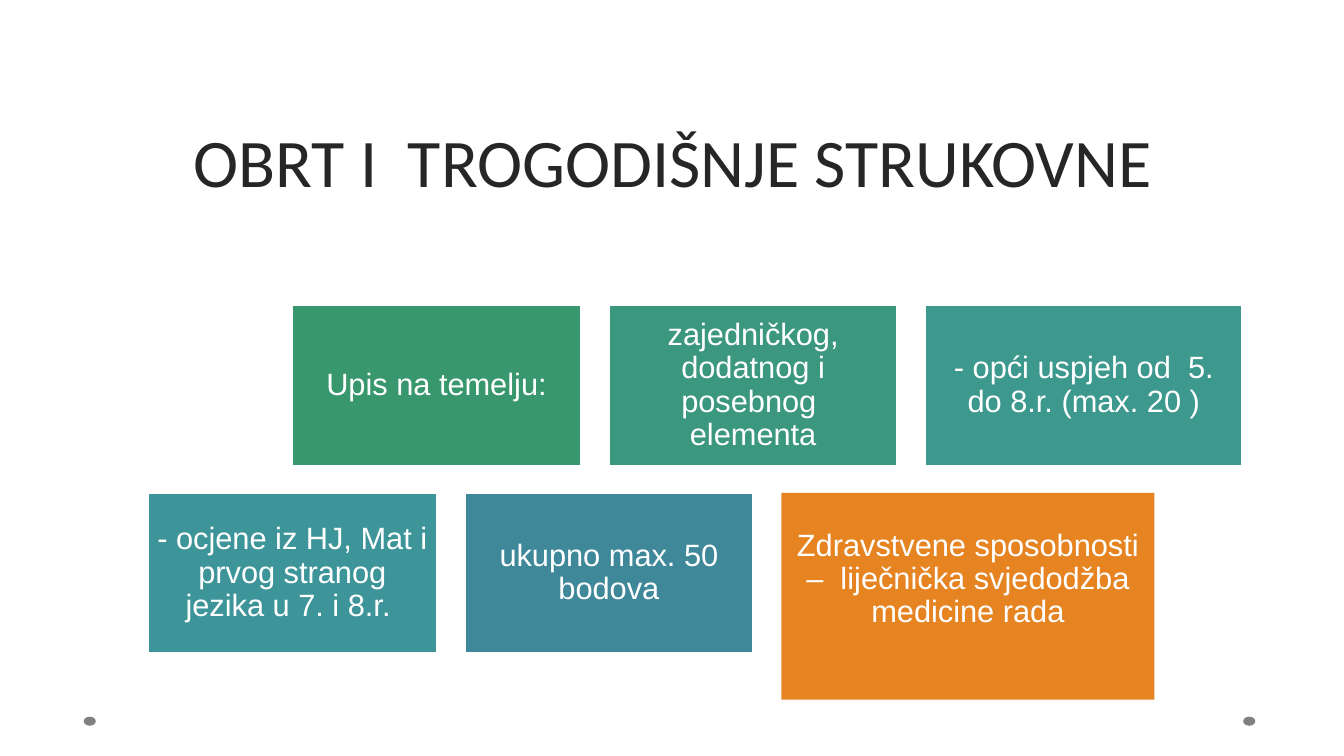
import pptx
import pptx.dml.color
import pptx.enum.shapes
import pptx.enum.text
import pptx.util

RGBColor = pptx.dml.color.RGBColor
WHITE = RGBColor(0xFF, 0xFF, 0xFF)
INK = RGBColor(0x26, 0x26, 0x26)
GRAY = RGBColor(0x80, 0x80, 0x80)
GREEN = RGBColor(0x39, 0x97, 0x6D)
SEA_GREEN = RGBColor(0x3B, 0x97, 0x7E)
TEAL = RGBColor(0x3D, 0x98, 0x8E)
CYAN = RGBColor(0x3E, 0x95, 0x99)
BLUE = RGBColor(0x3F, 0x88, 0x9A)
ORANGE = RGBColor(0xE6, 0x84, 0x22)

SHAPES = pptx.enum.shapes.MSO_SHAPE
INCH = pptx.util.Inches

# Card grid, in inches
COLUMN, ROW = 3.14, 1.86
CARD_WIDTH, CARD_HEIGHT = 2.86, 1.59
GRID_TOP = 3.03
ROW_STARTS = (2.9, 1.47)


class SlideBuilder:
    """Holds the text style and the page being built."""

    title_font, title_size = "Calibri", 48.6
    card_font, card_size = "Arial", 22
    card_inset = 0.09

    def __init__(self, deck):
        self.page = deck.slides.add_slide(deck.slide_layouts[6])

    def add_text(self, box, text, font, size, color, insets, spacing=1.0):
        frame = box.text_frame
        frame.word_wrap = True
        frame.vertical_anchor = pptx.enum.text.MSO_ANCHOR.MIDDLE
        (frame.margin_left, frame.margin_top,
         frame.margin_right, frame.margin_bottom) = map(INCH, insets)
        para = frame.paragraphs[0]
        para.alignment = pptx.enum.text.PP_ALIGN.CENTER
        para.line_spacing = spacing
        span = para.add_run()
        span.text = text
        span.font.name = font
        span.font.size = pptx.util.Pt(size)
        span.font.color.rgb = color

    def shape(self, kind, left, top, width, height, fill):
        box = self.page.shapes.add_shape(
            kind, INCH(left), INCH(top), INCH(width), INCH(height))
        box.shadow.inherit = False
        box.fill.solid()
        box.fill.fore_color.rgb = fill
        box.line.fill.background()
        return box

    def dot(self, left):
        self.shape(SHAPES.OVAL, left, 7.11, 0.12, 0.09, GRAY)

    def title(self, text):
        box = self.page.shapes.add_textbox(
            INCH(1.42), INCH(1.07), INCH(10.5), INCH(1.04))
        self.add_text(box, text, self.title_font, self.title_size, INK,
                      (0.1, 0.05, 0.1, 0.05))

    def card(self, row, column, text, fill, width=CARD_WIDTH,
             height=CARD_HEIGHT, outlined=True, lift=0.0):
        """Place a card on the grid; lift adds room below its text."""
        box = self.shape(SHAPES.RECTANGLE, ROW_STARTS[row] + column * COLUMN,
                         GRID_TOP + row * ROW, width, height, fill)
        if outlined:
            box.line.color.rgb = WHITE
            box.line.width = pptx.util.Pt(1.25)
        inset = self.card_inset
        self.add_text(box, text, self.card_font, self.card_size, WHITE,
                      (inset, inset, inset, inset + lift), spacing=0.9)


def main():
    deck = pptx.Presentation()
    deck.slide_width, deck.slide_height = INCH(13.33), INCH(7.5)
    slide = SlideBuilder(deck)

    # Footer dots
    for left in (0.83, 12.33):
        slide.dot(left)

    # Heading
    slide.title("OBRT I  TROGODIŠNJE STRUKOVNE")

    # Upper row of cards
    slide.card(0, 0, "Upis na temelju:", GREEN)
    slide.card(0, 1, "zajedničkog, dodatnog i posebnog  elementa", SEA_GREEN)
    slide.card(0, 2, "- opći uspjeh od  5. do 8.r. (max. 20 )", TEAL, width=3.14)

    # Lower row, closing with the large health card
    slide.card(1, 0, "- ocjene iz HJ, Mat i prvog stranog jezika u 7. i 8.r. ", CYAN)
    slide.card(1, 1, "ukupno max. 50 bodova", BLUE)
    slide.card(1, 2, "Zdravstvene sposobnosti –  liječnička svjedodžba medicine rada",
               ORANGE, width=3.7, height=2.05, outlined=False, lift=0.33)

    deck.save("out.pptx")


if __name__ == "__main__":
    main()
